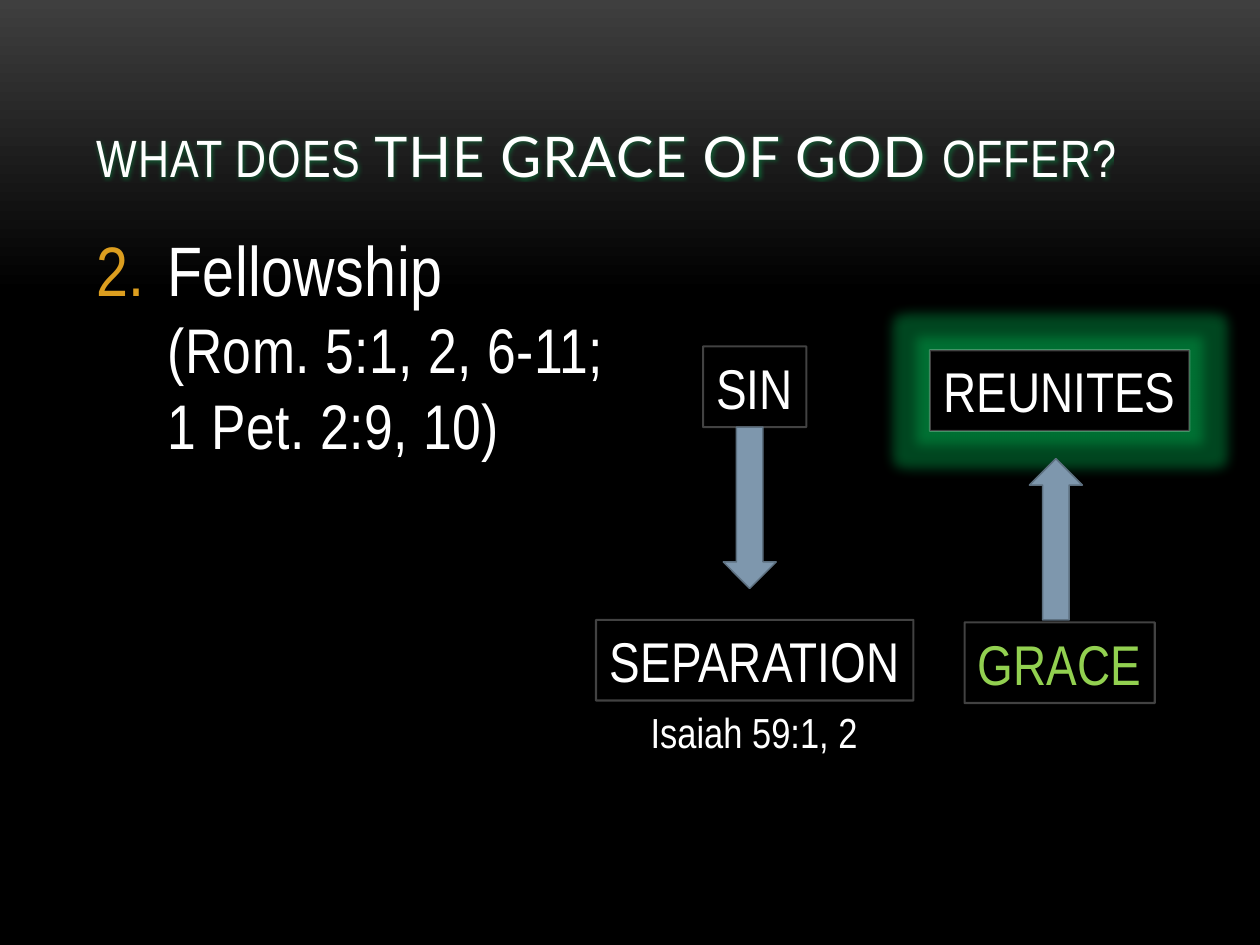
import pptx
import pptx.util
from lxml import etree
from pptx.dml.color import RGBColor
from pptx.enum.shapes import MSO_SHAPE
from pptx.enum.text import MSO_ANCHOR, MSO_AUTO_SIZE, PP_ALIGN
from pptx.oxml.ns import qn

WHITE = RGBColor(0xFF, 0xFF, 0xFF)
BLACK = RGBColor(0x00, 0x00, 0x00)
CHARCOAL = RGBColor(0x3F, 0x3F, 0x3F)
GOLD = RGBColor(0xDC, 0x9E, 0x1F)
STEEL = RGBColor(0x7E, 0x97, 0xAD)
STEEL_DARK = RGBColor(0x5D, 0x70, 0x80)
LIME = RGBColor(0x92, 0xD0, 0x50)
GREEN = RGBColor(0x00, 0xB0, 0x50)
NARROW = "Arial Narrow"
ROW_H = 0.64
ARROW_W, ARROW_H = 0.42, 1.28


def inches(*lengths):
    return [pptx.util.Inches(length) for length in lengths]


def add_child(parent, tag, **attributes):
    child = etree.SubElement(parent, qn(tag))
    for key, value in attributes.items():
        child.set(key, str(value))
    return child


def add_glow(effects, radius):
    glow = add_child(effects, "a:glow", rad=pptx.util.Pt(radius))
    colour = add_child(glow, "a:srgbClr", val=GREEN)
    add_child(colour, "a:alpha", val=40000)


def style(font, size, colour=WHITE):
    font.name, font.size = NARROW, pptx.util.Pt(size)
    font.color.rgb = colour


def set_label(shape, text, size, colour=WHITE):
    frame = shape.text_frame
    frame.word_wrap = False
    frame.auto_size = MSO_AUTO_SIZE.SHAPE_TO_FIT_TEXT
    line = frame.paragraphs[0]
    line.text = text
    line.alignment = PP_ALIGN.CENTER
    style(line.font, size, colour)


def paint_background(slide):
    fill = slide.background.fill
    fill.gradient()
    fill.gradient_angle = 270
    for stop, (position, colour) in zip(fill.gradient_stops, [(0, CHARCOAL), (0.31, BLACK)]):
        stop.position = position
        stop.color.rgb = colour


def add_title(slide, box):
    frame = slide.shapes.add_textbox(*inches(*box)).text_frame
    frame.word_wrap = True
    frame.vertical_anchor = MSO_ANCHOR.BOTTOM
    heading = frame.paragraphs[0]
    for text, size, face in [("WHAT DOES ", 30, NARROW),
                             ("THE GRACE OF GOD ", 32, "Lato"),
                             ("OFFER?", 30, NARROW)]:
        run = heading.add_run()
        run.text = text
        run.font.color.rgb = WHITE
        properties = run.font._element
        properties.set("spc", "50")
        add_glow(add_child(properties, "a:effectLst"), 5)
        run.font.size, run.font.name = pptx.util.Pt(size), face


def add_point(slide, box):
    frame = slide.shapes.add_textbox(*inches(*box)).text_frame
    frame.word_wrap = True
    point = frame.paragraphs[0]

    # Numbered bullet with a hanging indent
    properties = point._p.get_or_add_pPr()
    indent = pptx.util.Inches(0.56)
    properties.set("marL", str(indent))
    properties.set("indent", str(-indent))
    add_child(add_child(properties, "a:buClr"), "a:srgbClr", val=GOLD)
    add_child(properties, "a:buFont", typeface=NARROW)
    add_child(properties, "a:buAutoNum", type="arabicPeriod", startAt=2)

    point.space_after = pptx.util.Pt(6)
    style(point.font, 40)
    topic = point.add_run()
    topic.text = "Fellowship"
    point.add_line_break()
    verses = point.add_run()
    verses.text = "(Rom. 5:1, 2, 6-11; 1 Pet. 2:9, 10)"
    for run, size in [(topic, 40), (verses, 36)]:
        run.font.size = pptx.util.Pt(size)
        run.font._element.set("spc", "30")


def add_box(slide, centre, top, width, text, colour=WHITE, glowing=False):
    box = slide.shapes.add_shape(
        MSO_SHAPE.RECTANGLE, *inches(centre - width / 2, top, width, ROW_H))
    box.shadow.inherit = False
    box.fill.solid()
    box.fill.fore_color.rgb = BLACK
    box.line.color.rgb = WHITE
    box.line.width = pptx.util.Pt(1.2)
    line_colour = box.line._ln.find(".//" + qn("a:srgbClr"))
    add_child(line_colour, "a:alpha", val=25000)
    if glowing:
        add_glow(box._element.spPr.find(qn("a:effectLst")), 14)
    set_label(box, text, 32, colour)


def add_arrow(slide, kind, centre, top):
    arrow = slide.shapes.add_shape(
        kind, *inches(centre - ARROW_W / 2, top, ARROW_W, ARROW_H))
    arrow.shadow.inherit = False
    arrow.fill.solid()
    arrow.fill.fore_color.rgb = STEEL
    arrow.line.color.rgb = STEEL_DARK
    arrow.line.width = pptx.util.Pt(0.85)


def add_fall(slide, box):
    """Sin leads down to separation."""
    left, top, width, height = box
    centre, bottom = left + width / 2, top + height
    add_box(slide, centre, top, 0.82, "SIN")
    add_arrow(slide, MSO_SHAPE.DOWN_ARROW, centre - 0.04, top + ROW_H)
    add_box(slide, centre, bottom - ROW_H, width, "SEPARATION")
    verse = slide.shapes.add_textbox(*inches(centre - 0.94, bottom, 1.87, 0.5))
    set_label(verse, "Isaiah 59:1, 2", 24)


def add_return(slide, box):
    """Grace leads up to reunion."""
    left, top, width, height = box
    centre, grace_top = left + width / 2, top + height - ROW_H
    add_box(slide, centre, top, width, "REUNITES", glowing=True)
    add_arrow(slide, MSO_SHAPE.UP_ARROW, centre - 0.03, grace_top - 0.02 - ARROW_H)
    add_box(slide, centre, grace_top, 1.51, "GRACE", LIME)


def main():
    deck = pptx.Presentation()
    deck.slide_width, deck.slide_height = inches(10, 7.5)
    slide = deck.slides.add_slide(deck.slide_layouts[6])
    paint_background(slide)
    add_title(slide, (0.67, 0.3, 8.67, 1.25))
    add_point(slide, (0.67, 1.75, 4.42, 4.5))
    add_fall(slide, (4.73, 2.75, 2.52, 2.81))
    add_return(slide, (7.38, 2.78, 2.06, 2.8))
    deck.save("out.pptx")


if __name__ == "__main__":
    main()
